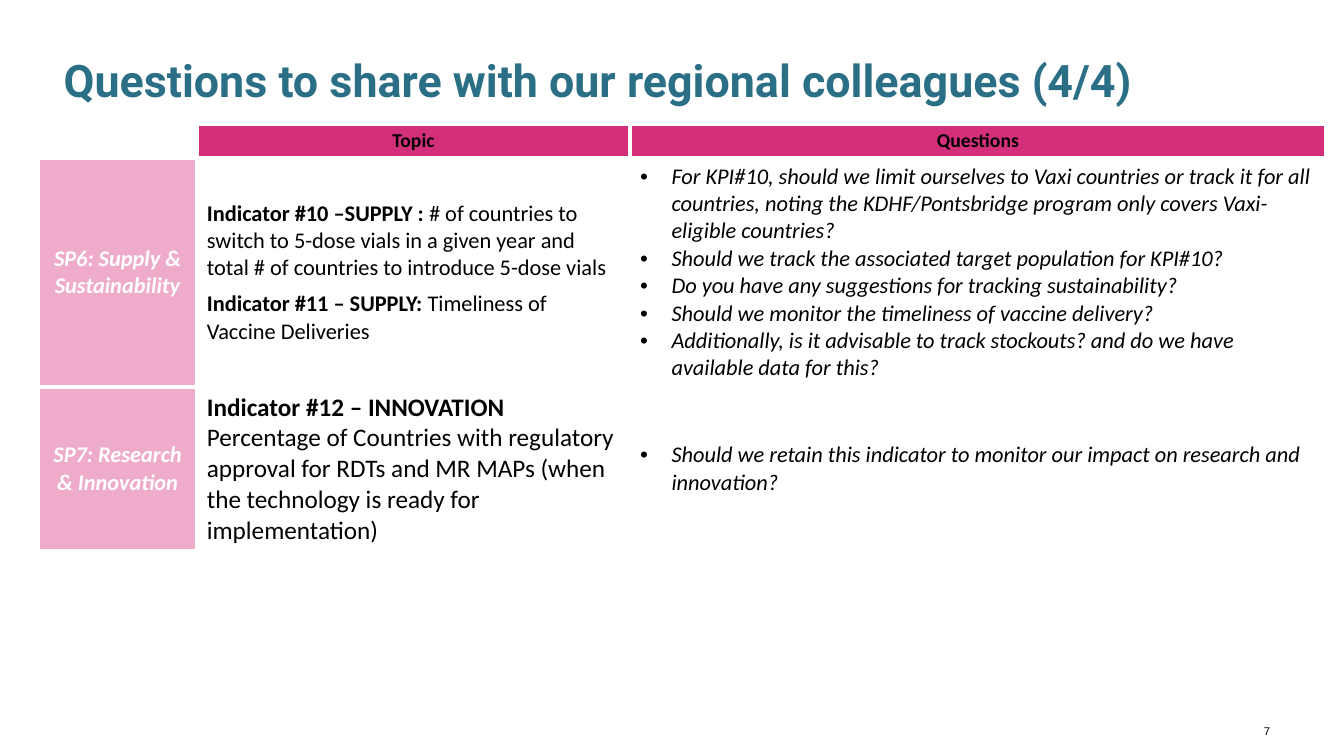
import dataclasses

import lxml.etree
import pptx
import pptx.dml.color
import pptx.enum.text
import pptx.oxml.ns
import pptx.util

Cm = pptx.util.Cm
Pt = pptx.util.Pt
Align = pptx.enum.text.PP_ALIGN
Anchor = pptx.enum.text.MSO_ANCHOR
qn = pptx.oxml.ns.qn


@dataclasses.dataclass(frozen=True)
class Theme:
    teal: str = "2B6F86"
    pink: str = "D42F7B"
    pale: str = "EEACCA"
    white: str = "FFFFFF"
    black: str = "000000"
    head: str = "Roboto"
    body: str = "Calibri"
    foot: str = "Arial"
    title: int = 32
    large: int = 18
    text: int = 16
    label: int = 14
    small: int = 8
    edge: int = 3


THEME = Theme()


def color(code):
    return pptx.dml.color.RGBColor.from_string(code)


def add_run(para, text, size, face=THEME.body, ink=THEME.black, bold=False, slant=False):
    run = para.add_run()
    run.text = text
    font = run.font
    font.name, font.size = face, Pt(size)
    font.bold, font.italic = bold, slant
    font.color.rgb = color(ink)


def next_para(frame):
    """Return the first paragraph while it is empty, else a new one."""
    first = frame.paragraphs[0]
    return frame.add_paragraph() if first.runs else first


def add_edges(cell):
    props = cell._tc.get_or_add_tcPr()
    for spot, side in enumerate(("lnL", "lnR", "lnT", "lnB")):
        line = lxml.etree.Element(qn("a:" + side), w=str(Pt(THEME.edge)))
        fill = lxml.etree.SubElement(line, qn("a:solidFill"))
        lxml.etree.SubElement(fill, qn("a:srgbClr"), val=THEME.white)
        props.insert(spot, line)


def style_cell(cell, fill=None):
    cell.vertical_anchor = Anchor.MIDDLE
    if fill:
        cell.fill.solid()
        cell.fill.fore_color.rgb = color(fill)
    else:
        cell.fill.background()
    add_edges(cell)


def fill_blank(cell):
    """Keep an empty cell from making its row taller."""
    style_cell(cell)
    para = cell.text_frame.paragraphs[0]
    lxml.etree.SubElement(para._p, qn("a:endParaRPr"), sz=str(THEME.label * 100))


def fill_label(cell, text, fill, size, ink, slant=False):
    style_cell(cell, fill)
    para = next_para(cell.text_frame)
    para.alignment = Align.CENTER
    add_run(para, text, size, ink=ink, bold=True, slant=slant)


def fill_topic(cell, paras, size, gap=0):
    """Write paragraphs of (text, bold) runs."""
    style_cell(cell)
    for runs in paras:
        para = next_para(cell.text_frame)
        para.space_after = Pt(gap)
        for text, bold in runs:
            add_run(para, text, size, bold=bold)


def fill_list(cell, items):
    style_cell(cell)
    for text in items:
        para = next_para(cell.text_frame)
        props = para._p.get_or_add_pPr()
        props.set("marL", str(Cm(0.79)))
        props.set("indent", str(-Cm(0.79)))
        lxml.etree.SubElement(props, qn("a:buFont"), typeface=THEME.foot)
        lxml.etree.SubElement(props, qn("a:buChar"), char="•")
        add_run(para, text, THEME.text, slant=True)


def add_title(slide, text):
    title = slide.shapes.title
    title.left, title.top = Cm(1.35), Cm(1.8)
    title.width, title.height = Cm(30.86), Cm(1.04)
    frame = title.text_frame
    frame.auto_size = pptx.enum.text.MSO_AUTO_SIZE.NONE
    frame.vertical_anchor = Anchor.BOTTOM
    para = next_para(frame)
    para.alignment = Align.LEFT
    para.line_spacing = 0.9
    add_run(para, text, THEME.title, THEME.head, THEME.teal, bold=True)


def add_grid(slide, widths, heights):
    frame = slide.shapes.add_table(
        len(heights), len(widths), Cm(0.97), Cm(3.12), Cm(sum(widths)), Cm(sum(heights)))
    table = frame.table
    table.first_row = table.horz_banding = False
    for col, width in zip(table.columns, widths):
        col.width = Cm(width)
    for row, height in zip(table.rows, heights):
        row.height = Cm(height)
    return table


def add_page(slide, text):
    box = slide.shapes.add_textbox(Cm(31.55), Cm(18.14), Cm(0.71), Cm(0.58))
    frame = box.text_frame
    frame.word_wrap = True
    frame.vertical_anchor = Anchor.MIDDLE
    para = next_para(frame)
    para.alignment = Align.RIGHT
    add_run(para, text, THEME.small, THEME.foot)


def main():
    deck = pptx.Presentation()
    deck.slide_width, deck.slide_height = Cm(33.87), Cm(19.05)
    slide = deck.slides.add_slide(deck.slide_layouts[5])
    add_title(slide, "Questions to share with our regional colleagues (4/4)")

    table = add_grid(slide, (3.99, 10.92, 17.53), (0.85, 5.77, 4.13))
    fill_blank(table.cell(0, 0))
    for col, text in enumerate(("Topic", "Questions"), 1):
        fill_label(table.cell(0, col), text, THEME.pink, THEME.label, THEME.black)

    supply = (
        (("Indicator #10 –SUPPLY : ", True),
         ("# of countries to switch to 5-dose vials in a given year and "
          "total # of countries to introduce 5-dose vials", False)),
        (("Indicator #11 – SUPPLY: ", True), ("Timeliness of Vaccine Deliveries", False)),
    )
    novel = (
        (("Indicator #12 – INNOVATION", True),),
        (("Percentage of Countries with regulatory approval for RDTs and MR MAPs "
          "(when the technology is ready for implementation)", False),),
    )
    rows = (
        ("SP6: Supply & Sustainability", supply, THEME.text, 6, (
            "For KPI#10, should we limit ourselves to Vaxi countries or track it for all "
            "countries, noting the KDHF/Pontsbridge program only covers Vaxi-eligible countries?",
            "Should we track the associated target population for KPI#10?",
            "Do you have any suggestions for tracking sustainability?",
            "Should we monitor the timeliness of vaccine delivery?",
            "Additionally, is it advisable to track stockouts? and do we have "
            "available data for this?")),
        ("SP7: Research & Innovation", novel, THEME.large, 0, (
            "Should we retain this indicator to monitor our impact on research and innovation?",)),
    )
    for row, (label, topic, size, gap, asks) in enumerate(rows, 1):
        fill_label(table.cell(row, 0), label, THEME.pale, THEME.text, THEME.white, slant=True)
        fill_topic(table.cell(row, 1), topic, size, gap)
        fill_list(table.cell(row, 2), asks)

    add_page(slide, "7")
    deck.save("out.pptx")


if __name__ == "__main__":
    main()
